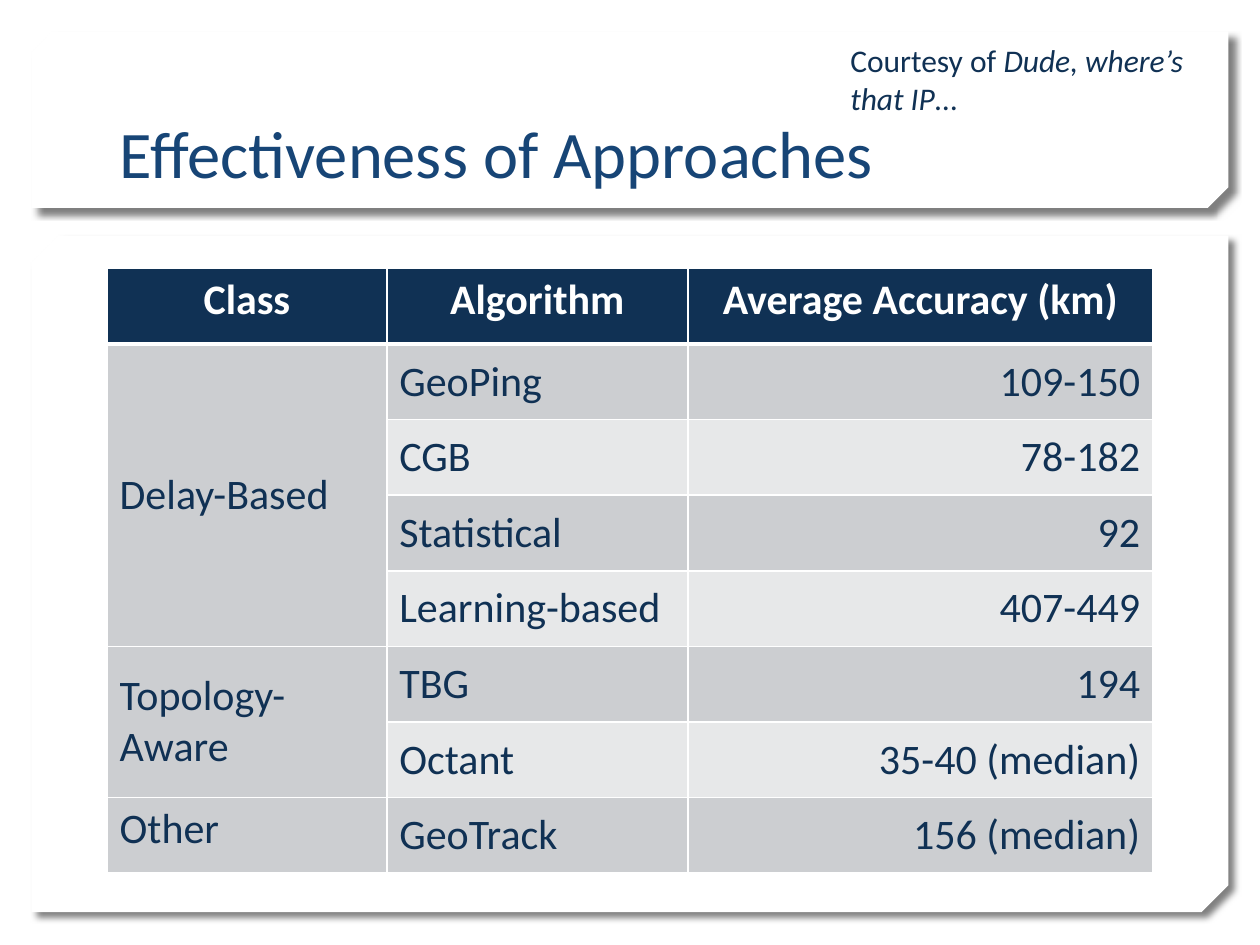
from lxml.etree import SubElement
from pptx import Presentation
from pptx.dml.color import RGBColor
from pptx.enum.shapes import MSO_SHAPE
from pptx.enum.text import MSO_ANCHOR, PP_ALIGN
from pptx.oxml import parse_xml
from pptx.oxml.ns import nsdecls, qn
from pptx.util import Inches, Pt

FONT = "Calibri"
NAVY, BLUE, WHITE = "103154", "174576", "FFFFFF"
DARK_BAND, LIGHT_BAND = "CCCED1", "E7E8E9"
COLUMN_WIDTHS = [2.22, 2.39, 3.69]
ROW_HEIGHT = 0.6
HEADINGS = ["Class", "Algorithm", "Average Accuracy (km)"]
CLASSES = [
    ("Delay-Based", [("GeoPing", "109-150"), ("CGB", "78-182"),
                     ("Statistical", "92"), ("Learning-based", "407-449")]),
    ("Topology-Aware", [("TBG", "194"), ("Octant", "35-40 (median)")]),
    ("Other", [("GeoTrack", "156 (median)")]),
]


def rgb(color):
    return RGBColor.from_string(color)


def style_run(run, size, color, bold=False, italic=False):
    run.font.name = FONT
    run.font.size = Pt(size)
    run.font.color.rgb = rgb(color)
    run.font.bold = bold
    run.font.italic = italic


def add_panel(slide, top, height, snip):
    panel = slide.shapes.add_shape(
        MSO_SHAPE.SNIP_2_DIAG_RECTANGLE,
        Inches(0.25), Inches(top), Inches(9.5), Inches(height))
    panel.adjustments[0] = 0
    panel.adjustments[1] = snip
    panel.fill.solid()
    panel.fill.fore_color.rgb = rgb(WHITE)
    panel.line.fill.background()
    properties = panel._element.spPr
    properties.find(qn("a:xfrm")).set("flipV", "1")
    properties.append(parse_xml(
        f'<a:effectLst {nsdecls("a")}>'
        f'<a:outerShdw blurRad="{Pt(4)}" dist="{Pt(5)}" dir="2700000" '
        'algn="tl" rotWithShape="0"><a:srgbClr val="000000">'
        '<a:alpha val="50000"/></a:srgbClr></a:outerShdw></a:effectLst>'))
    slide.shapes.title._element.addprevious(panel._element)


def format_title(title):
    title.left, title.top = Inches(0.85), Inches(0.32)
    title.width, title.height = Inches(8.29), Inches(1.25)
    title.text_frame.text = "Effectiveness of Approaches"
    title.text_frame.vertical_anchor = MSO_ANCHOR.BOTTOM
    heading = title.text_frame.paragraphs[0]
    heading.alignment = PP_ALIGN.LEFT
    style_run(heading.runs[0], 38, BLUE)


def set_borders(cell, top=1, bottom=1):
    properties = cell._tc.get_or_add_tcPr()
    for side, width in (("L", 1), ("R", 1), ("T", top), ("B", bottom)):
        line = SubElement(properties, qn(f"a:ln{side}"), w=str(Pt(width)))
        fill = SubElement(line, qn("a:solidFill"))
        SubElement(fill, qn("a:srgbClr"), val=WHITE)


def fill_cell(cell, text, color, align=PP_ALIGN.LEFT,
              anchor=MSO_ANCHOR.MIDDLE, header=False):
    cell.text_frame.text = text
    cell.vertical_anchor = anchor
    cell.fill.solid()
    cell.fill.fore_color.rgb = rgb(color)
    paragraph = cell.text_frame.paragraphs[0]
    paragraph.alignment = align
    for run in paragraph.runs:
        style_run(run, 24, WHITE if header else NAVY, bold=header)


def add_accuracy_table(slide):
    row_count = 1 + sum(len(algorithms) for _, algorithms in CLASSES)
    table = slide.shapes.add_table(
        row_count, len(HEADINGS), Inches(0.85), Inches(2.13),
        Inches(sum(COLUMN_WIDTHS)), Inches(ROW_HEIGHT * row_count)).table
    for column, width in zip(table.columns, COLUMN_WIDTHS):
        column.width = Inches(width)
    for index, row in enumerate(table.rows):
        row.height = Inches(ROW_HEIGHT)
        for cell in row.cells:
            set_borders(cell, top=3 if index == 1 else 1,
                        bottom=3 if index == 0 else 1)

    for column, heading in enumerate(HEADINGS):
        fill_cell(table.cell(0, column), heading, NAVY, PP_ALIGN.CENTER,
                  MSO_ANCHOR.TOP, header=True)

    row = 1
    for class_name, algorithms in CLASSES:
        class_cell = table.cell(row, 0)
        grouped = len(algorithms) > 1
        if grouped:
            class_cell.merge(table.cell(row + len(algorithms) - 1, 0))
        fill_cell(class_cell, class_name, DARK_BAND,
                  anchor=MSO_ANCHOR.MIDDLE if grouped else MSO_ANCHOR.TOP)
        for algorithm, accuracy in algorithms:
            band = DARK_BAND if row % 2 else LIGHT_BAND
            fill_cell(table.cell(row, 1), algorithm, band)
            fill_cell(table.cell(row, 2), accuracy, band, PP_ALIGN.RIGHT)
            row += 1


def add_credit(slide):
    credit = slide.shapes.add_textbox(
        Inches(6.65), Inches(0.28), Inches(3.1), Inches(0.71))
    credit.text_frame.word_wrap = True
    paragraph = credit.text_frame.paragraphs[0]
    for text, italic in (("Courtesy of ", False),
                         ("Dude, where’s that IP", True), ("…", False)):
        run = paragraph.add_run()
        run.text = text
        style_run(run, 18, NAVY, italic=italic)


def main():
    presentation = Presentation()
    presentation.slide_width = Inches(10)
    presentation.slide_height = Inches(7.5)
    slide = presentation.slides.add_slide(presentation.slide_layouts[5])
    add_panel(slide, 1.87, 5.37, 0.04)
    add_panel(slide, 0.25, 1.4, 0.117)
    format_title(slide.shapes.title)
    add_accuracy_table(slide)
    add_credit(slide)
    presentation.save("out.pptx")


if __name__ == "__main__":
    main()
